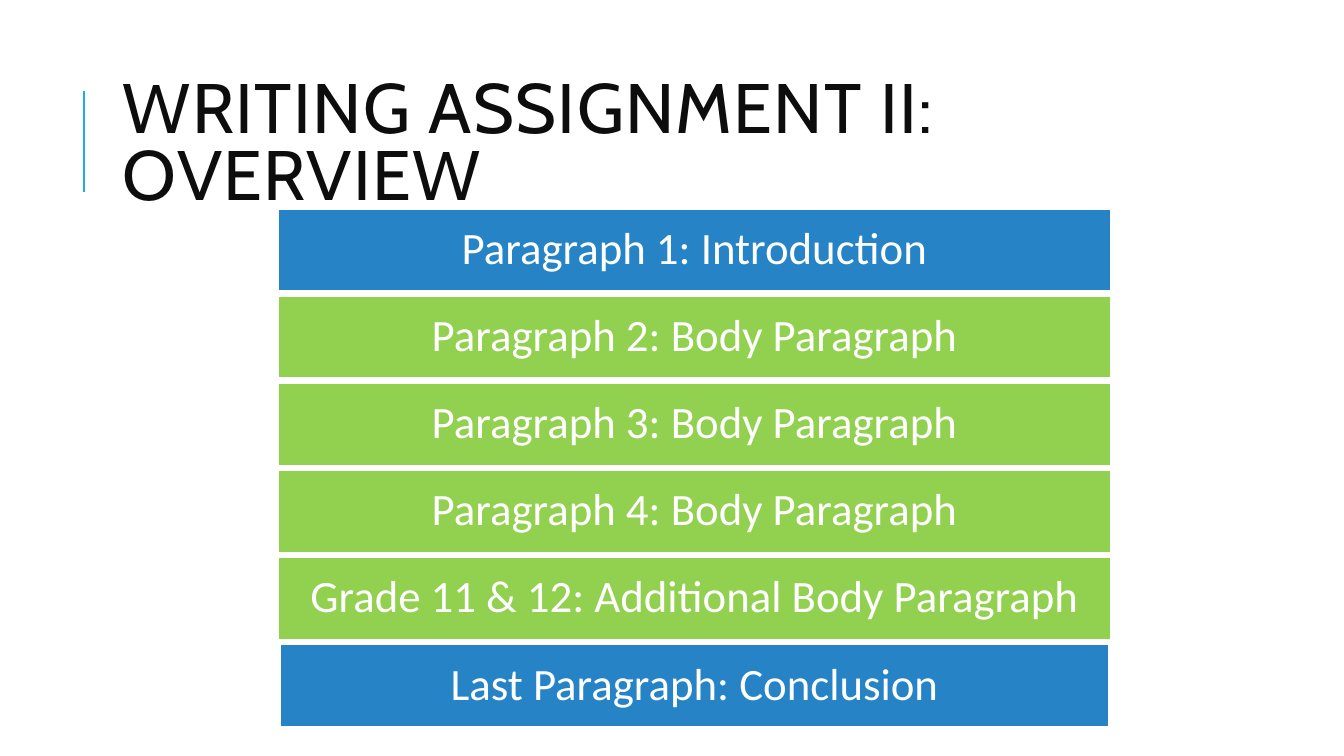
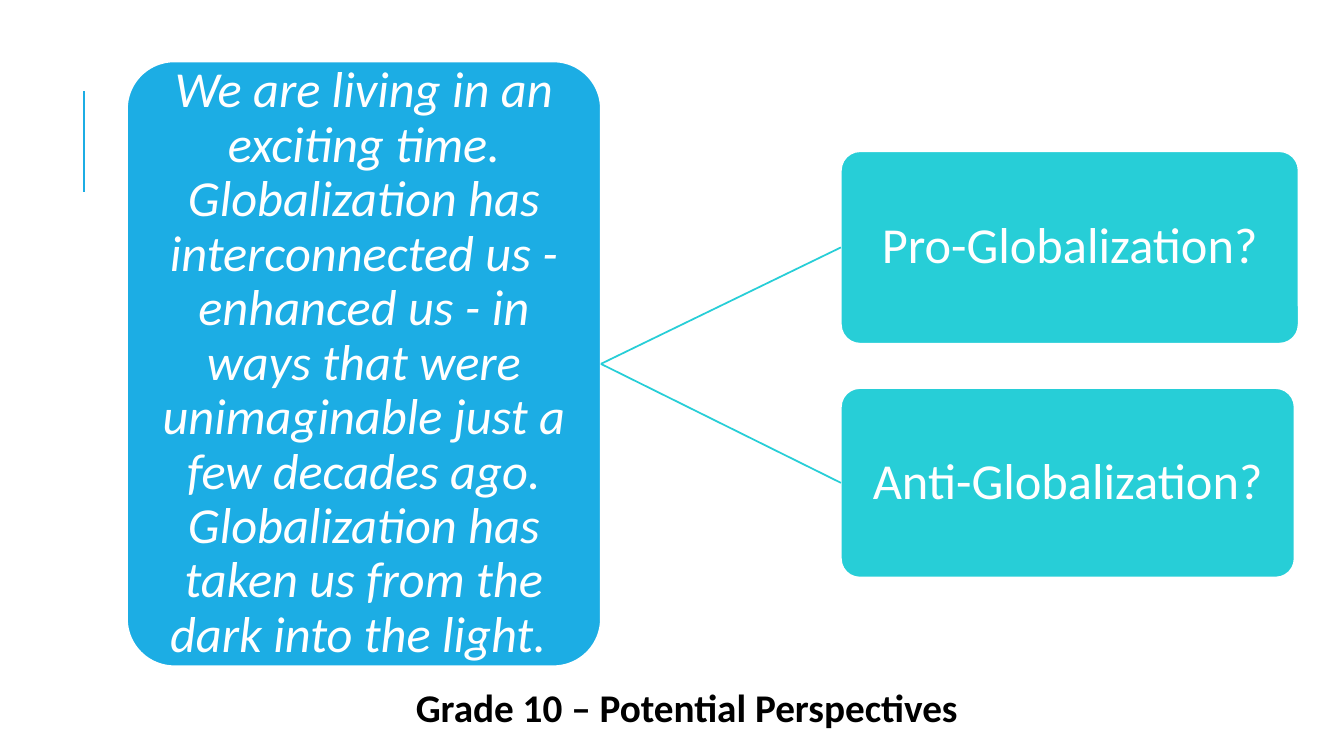
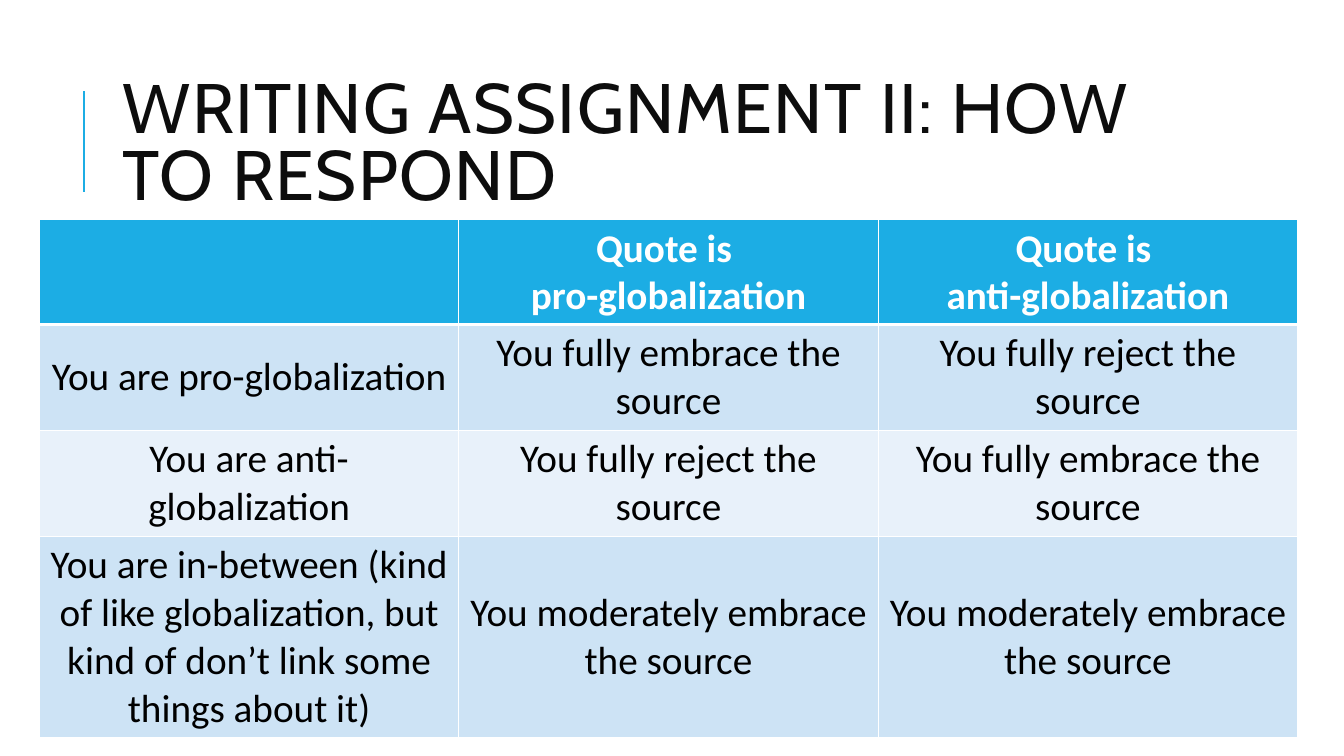
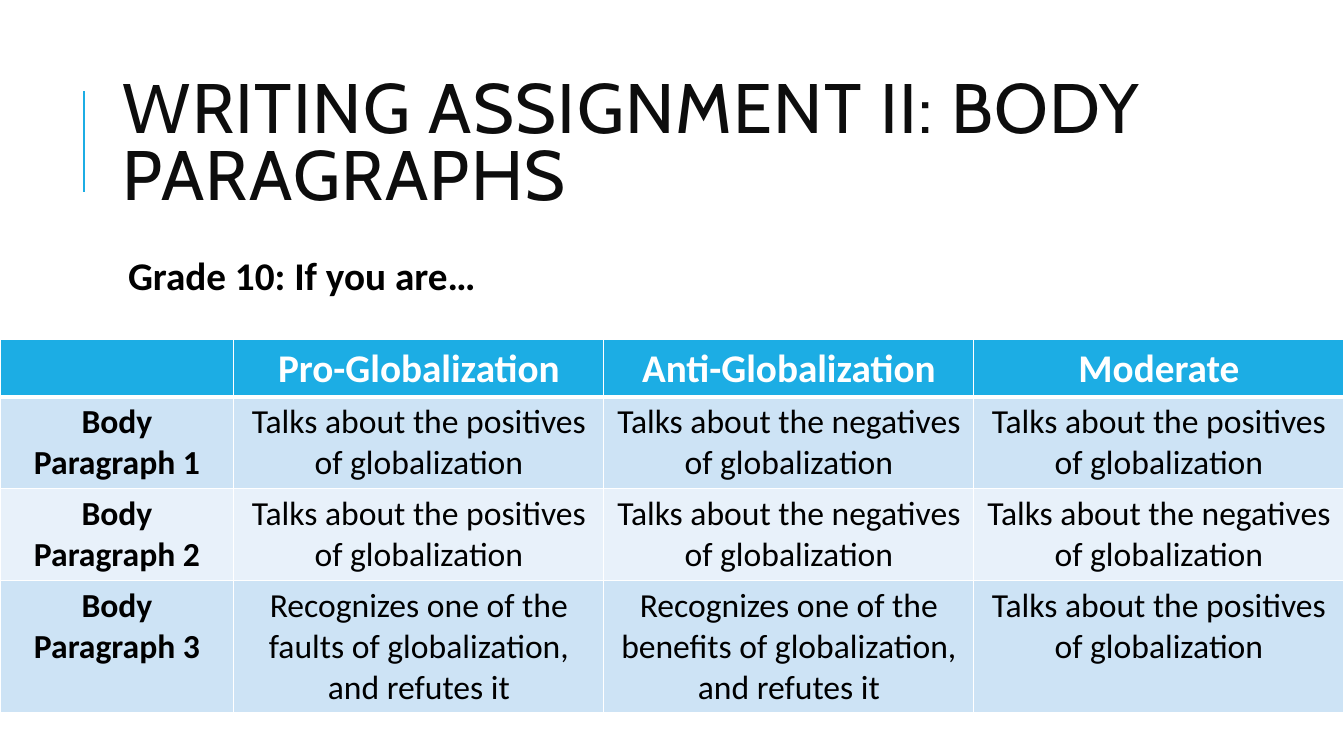
from dataclasses import dataclass

import pptx
import pptx.dml.color
import pptx.enum.shapes
import pptx.enum.text
import pptx.oxml
import pptx.oxml.ns
import pptx.slide
import pptx.util

Inches = pptx.util.Inches
Pt = pptx.util.Pt
qn = pptx.oxml.ns.qn
RGB = pptx.dml.color.RGBColor.from_string
Shape = pptx.enum.shapes.MSO_SHAPE
Align = pptx.enum.text.PP_ALIGN
Anchor = pptx.enum.text.MSO_ANCHOR


@dataclass(frozen=True)
class Theme:
    title_font: str = "Cabin"
    body_font: str = "Calibri"
    white: str = "FFFFFF"
    black: str = "000000"
    title_ink: str = "0D0D0D"
    accent: str = "1CADE4"
    blue: str = "2683C6"
    green: str = "92D050"
    teal: str = "27CED7"
    band_dark: str = "CDE3F5"
    band_light: str = "E8F1FA"
    title_size: int = 50
    quote_size: int = 36
    bar_size: int = 32
    body_size: int = 28
    small_size: int = 24


T = Theme()


@dataclass(frozen=True)
class Box:
    left: float
    top: float
    width: float
    height: float

    def emu(self) -> tuple:
        return tuple(Inches(v) for v in (self.left, self.top, self.width, self.height))


@dataclass(frozen=True)
class Style:
    size: int
    color: str = T.white
    font: str = T.body_font
    bold: bool = False
    italic: bool = False
    align: Align = Align.CENTER
    spacing: float = 1.0


@dataclass(frozen=True)
class Block:
    text: str
    box: Box
    fill: str


@dataclass(frozen=True)
class Grid:
    box: Box
    col_widths: list[float]
    row_heights: list[float]
    rows: list[list[str]]
    body_size: int
    anchor: Anchor
    bold_first_col: bool = False


def write(tf, text: str, style: Style) -> None:
    tf.text = text
    for p in tf.paragraphs:
        p.alignment = style.align
        p.line_spacing = style.spacing
        f = p.font
        f.name, f.size = style.font, Pt(style.size)
        f.bold, f.italic = style.bold, style.italic
        f.color.rgb = RGB(style.color)


def add_text(s: pptx.slide.Slide, text: str, box: Box, style: Style,
             anchor: Anchor = Anchor.TOP):
    tf = s.shapes.add_textbox(*box.emu()).text_frame
    tf.word_wrap = True
    tf.vertical_anchor = anchor
    write(tf, text, style)
    return tf


def add_block(s: pptx.slide.Slide, block: Block, style: Style, margin: float,
              rounded: bool = False):
    kind = Shape.ROUNDED_RECTANGLE if rounded else Shape.RECTANGLE
    sp = s.shapes.add_shape(kind, *block.box.emu())
    if rounded:
        sp.adjustments[0] = 0.1
    sp.shadow.inherit = False
    sp.fill.solid()
    sp.fill.fore_color.rgb = RGB(block.fill)
    sp.line.color.rgb = RGB(T.white)
    sp.line.width = Pt(1.25)
    tf = sp.text_frame
    tf.word_wrap = True
    tf.vertical_anchor = Anchor.MIDDLE
    tf.margin_left = tf.margin_right = tf.margin_top = tf.margin_bottom = Inches(margin)
    write(tf, block.text, style)
    return sp


def add_line(s: pptx.slide.Slide, start: tuple[float, float], end: tuple[float, float],
             color: str, width: float):
    points = [Inches(v) for v in (*start, *end)]
    line = s.shapes.add_connector(pptx.enum.shapes.MSO_CONNECTOR.STRAIGHT, *points)
    line.line.color.rgb = RGB(color)
    line.line.width = Pt(width)
    line.element.spPr.append(pptx.oxml.parse_xml(
        f"<a:effectLst {pptx.oxml.ns.nsdecls('a')}/>"))
    return line


def add_slide(prs, title: str = "") -> pptx.slide.Slide:
    """Add a blank slide with the accent rule and, if given, a title."""
    s = prs.slides.add_slide(prs.slide_layouts[6])
    add_line(s, (0.83, 1.9), (0.83, 0.9), T.accent, 1.5)
    if title:
        style = Style(T.title_size, T.title_ink, T.title_font, align=Align.LEFT, spacing=0.8)
        tf = add_text(s, title, Box(1.12, 0.64, 10.63, 1.64), style, Anchor.MIDDLE)
        tf.paragraphs[0].runs[0]._r.get_or_add_rPr().set("spc", "100")
    return s


def set_borders(cell, top: float, bottom: float) -> None:
    tc_pr = cell._tc.get_or_add_tcPr()
    for side, width in (("L", 1), ("R", 1), ("T", top), ("B", bottom)):
        tc_pr.append(pptx.oxml.parse_xml(
            f"<a:ln{side} {pptx.oxml.ns.nsdecls('a')} w='{Pt(width)}'>"
            f"<a:solidFill><a:srgbClr val='{T.white}'/></a:solidFill></a:ln{side}>"))


def add_grid(s: pptx.slide.Slide, grid: Grid) -> None:
    """Add a table with a header row and banded body rows."""
    table = s.shapes.add_table(len(grid.rows), len(grid.col_widths), *grid.box.emu()).table
    for col, width in zip(table.columns, grid.col_widths):
        col.width = Inches(width)
    for i, (row, height) in enumerate(zip(table.rows, grid.row_heights)):
        row.height = Inches(height)
        header = i == 0
        fill = T.accent if header else (T.band_dark if i % 2 else T.band_light)
        for j, (cell, text) in enumerate(zip(row.cells, grid.rows[i])):
            set_borders(cell, top=3 if i == 1 else 1, bottom=3 if header else 1)
            cell.fill.solid()
            cell.fill.fore_color.rgb = RGB(fill)
            cell.vertical_anchor = grid.anchor
            write(cell.text_frame, text, Style(
                T.body_size if header else grid.body_size,
                T.white if header else T.black,
                bold=header or (grid.bold_first_col and j == 0)))


def overview_slide(prs) -> None:
    s = add_slide(prs, "WRITING ASSIGNMENT II: OVERVIEW")
    labels = ["Paragraph 1: Introduction", "Paragraph 2: Body Paragraph",
              "Paragraph 3: Body Paragraph", "Paragraph 4: Body Paragraph",
              "Grade 11 & 12: Additional Body Paragraph", "Last Paragraph: Conclusion"]
    first_top, last_top, center = 2.07, 6.39, 6.89
    last = len(labels) - 1
    pitch = (last_top - first_top) / last
    for i, label in enumerate(labels):
        width = 8.22 if i == last else 8.26
        box = Box(center - width / 2, first_top + i * pitch, width, 0.82)
        fill = T.blue if i in (0, last) else T.green
        add_block(s, Block(label, box, fill), Style(T.bar_size, spacing=0.9), 0.09)


def perspectives_slide(prs) -> None:
    s = add_slide(prs)
    quote = Block(
        "We are living in an exciting time. Globalization has interconnected us - "
        "enhanced us - in ways that were unimaginable just a few decades ago. "
        "Globalization has taken us from the dark into the light. ",
        Box(1.26, 0.61, 4.7, 6), T.accent)
    choices = [Block("Pro-Globalization?", Box(8.34, 1.5, 4.54, 1.91), T.teal),
               Block("Anti-Globalization?", Box(8.34, 3.85, 4.5, 1.88), T.teal)]
    quote_sp = add_block(s, quote, Style(T.quote_size, italic=True, spacing=0.9), 0.03, True)
    left_site, right_site = 1, 3
    for choice in choices:
        sp = add_block(s, choice, Style(T.quote_size, spacing=0.9), 0.03, True)
        line = add_line(s, (5.96, 3.61), (8.34, 3.61), T.teal, 1.25)
        line.begin_connect(quote_sp, right_site)
        line.end_connect(sp, left_site)
    add_text(s, "Grade 10 – Potential Perspectives", Box(3.64, 6.73, 6.34, 0.57),
             Style(T.body_size, T.black, bold=True))


def respond_slide(prs) -> None:
    s = add_slide(prs, "WRITING ASSIGNMENT II: HOW TO RESPOND")
    embrace, reject = "You fully embrace the source", "You fully reject the source"
    moderate = "You moderately embrace the source"
    add_grid(s, Grid(
        Box(0.39, 2.18, 12.48, 5.07), [4.16] * 3, [1.04, 1.05, 1.05, 2],
        [["", "Quote is \npro-globalization", "Quote is \nanti-globalization"],
         ["You are pro-globalization", embrace, reject],
         ["You are anti-globalization", reject, embrace],
         ["You are in-between (kind of like globalization, but kind of don’t link "
          "some things about it)", moderate, moderate]],
        T.body_size, Anchor.MIDDLE))


def body_paragraphs_slide(prs) -> None:
    s = add_slide(prs, "WRITING ASSIGNMENT II: BODY PARAGRAPHS")
    tf = add_text(s, "Grade 10: If you are…", Box(1.12, 2.5, 10.63, 0.6),
                  Style(T.body_size, T.black, bold=True, align=Align.LEFT, spacing=0.9))
    tf.margin_left, tf.margin_top = Inches(0.15), Inches(0.05)
    positives = "Talks about the positives of globalization"
    negatives = "Talks about the negatives of globalization"
    refutes = "Recognizes one of the {} of globalization, and refutes it"
    add_grid(s, Grid(
        Box(0, 3.37, 13.33, 3.67), [2.32] + [3.67] * 3, [0.56, 0.91, 0.91, 1.31],
        [["", "Pro-Globalization", "Anti-Globalization", "Moderate"],
         ["Body Paragraph 1", positives, negatives, positives],
         ["Body Paragraph 2", positives, negatives, negatives],
         ["Body Paragraph 3", refutes.format("faults"), refutes.format("benefits"),
          positives]],
        T.small_size, Anchor.TOP, bold_first_col=True))


def main() -> None:
    prs = pptx.Presentation()
    prs.slide_width, prs.slide_height = Inches(13.33), Inches(7.5)
    overview_slide(prs)
    perspectives_slide(prs)
    respond_slide(prs)
    body_paragraphs_slide(prs)
    prs.save("out.pptx")


if __name__ == "__main__":
    main()
